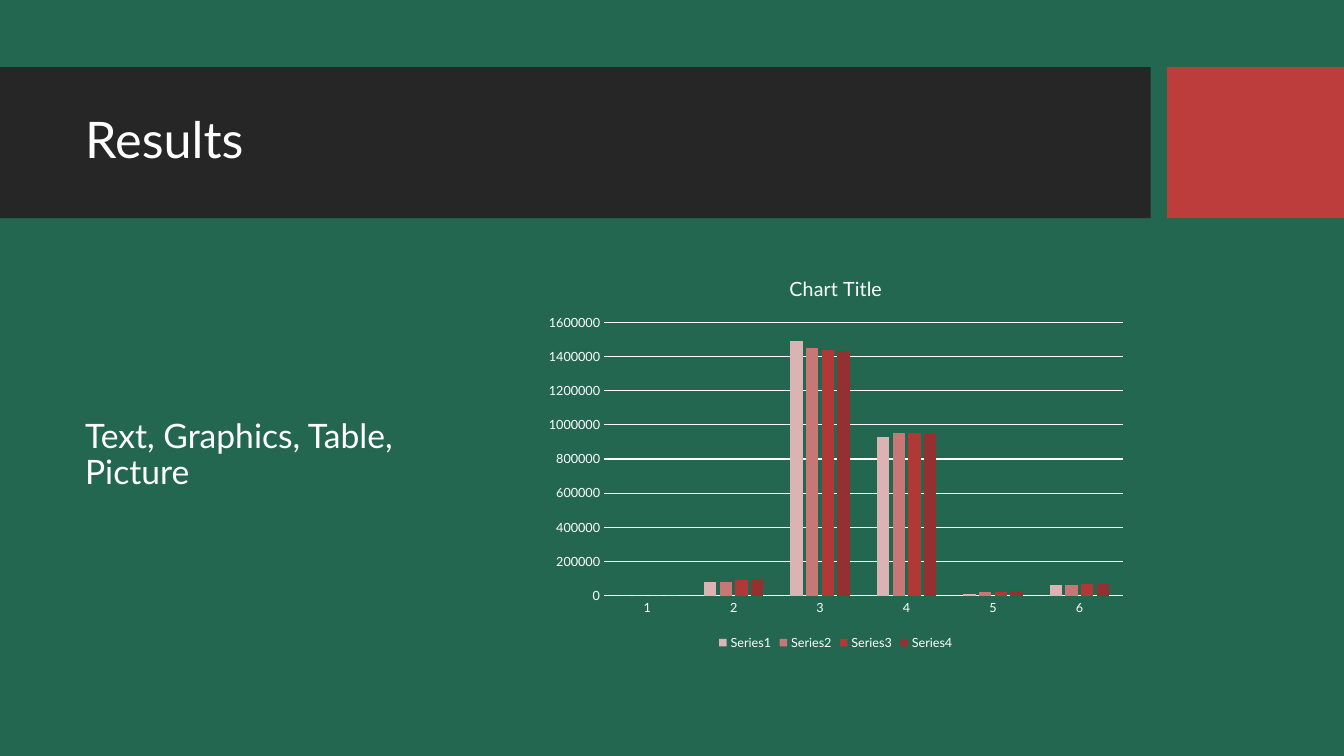
from pptx import Presentation
from pptx.chart.data import CategoryChartData
from pptx.dml.color import RGBColor
from pptx.enum.chart import XL_CHART_TYPE, XL_LEGEND_POSITION, XL_TICK_MARK
from pptx.enum.shapes import MSO_SHAPE
from pptx.enum.text import MSO_ANCHOR
from pptx.util import Pt

RECT = MSO_SHAPE.RECTANGLE
MIDDLE = MSO_ANCHOR.MIDDLE
COLUMN = XL_CHART_TYPE.COLUMN_CLUSTERED
BOTTOM = XL_LEGEND_POSITION.BOTTOM
NO_TICK = XL_TICK_MARK.NONE

FONT = "Lato"
COLORS = {"back": "236751", "band": "262626", "accent": "BC3D3B", "text": "FFFFFF"}
SERIES = {
    "Series1": ("DBB3B2", (0, 80000, 1490000, 930000, 10000, 60000)),
    "Series2": ("C77776", (0, 80000, 1450000, 950000, 20000, 60000)),
    "Series3": ("B03937", (0, 90000, 1440000, 950000, 20000, 70000)),
    "Series4": ("94302F", (0, 100000, 1430000, 950000, 30000, 70000)),
}


def paint(fill, color):
    fill.solid()
    fill.fore_color.rgb = RGBColor.from_string(color)


def style(font, size):
    for name, value in {"name": FONT, "size": Pt(size), "bold": False}.items():
        setattr(font, name, value)
    font.color.rgb = RGBColor.from_string(COLORS["text"])


def add_block(slide, box, color):
    block = slide.shapes.add_shape(RECT, *map(Pt, box))
    block.shadow.inherit = False
    paint(block.fill, color)
    block.line.fill.background()


def add_text(slide, box, text, size):
    frame = slide.shapes.add_textbox(*map(Pt, box)).text_frame
    frame.word_wrap = True
    frame.vertical_anchor = MIDDLE
    para = frame.paragraphs[0]
    para.line_spacing = 0.9
    run = para.add_run()
    run.text = text
    style(run.font, size)


def add_header(slide, box, title):
    left, top, width, height = box
    band, gap, inset = 822, 11.6, 53.8
    add_block(slide, (left, top, band, height), COLORS["band"])
    start = left + band + gap
    add_block(slide, (start, top, left + width - start, height), COLORS["accent"])
    add_text(slide, (left + inset, top + 11, 756.7, 85), title, 36)


def add_results(slide, box):
    data = CategoryChartData()
    data.categories = [str(n) for n in range(1, 7)]
    for name, (_, values) in SERIES.items():
        data.add_series(name, values)
    chart = slide.shapes.add_chart(COLUMN, *map(Pt, box), data).chart
    style(chart.font, 10)

    # Title and legend
    chart.has_title = True
    frame = chart.chart_title.text_frame
    frame.text = "Chart Title"
    style(frame.paragraphs[0].runs[0].font, 14)
    chart.chart_title.include_in_layout = False
    chart.has_legend = True
    chart.legend.position = BOTTOM
    chart.legend.include_in_layout = False
    style(chart.legend.font, 9)

    # Axes and grid
    cat, val = chart.category_axis, chart.value_axis
    for axis in (cat, val):
        axis.major_tick_mark = axis.minor_tick_mark = NO_TICK
        style(axis.tick_labels.font, 9)
    val.has_major_gridlines = True
    for line in (cat.format.line, val.major_gridlines.format.line):
        paint(line.fill, COLORS["text"])
        line.width = Pt(0.75)
    val.format.line.fill.background()
    val.minimum_scale, val.maximum_scale, val.major_unit = 0, 1600000, 200000
    val.tick_labels.number_format = "0"
    val.tick_labels.number_format_is_linked = False

    # Columns
    plot = chart.plots[0]
    plot.vary_by_categories = False
    plot.gap_width, plot.overlap = 219, -27
    for series, (color, _) in zip(plot.series, SERIES.values()):
        series.invert_if_negative = False
        paint(series.format.fill, color)


def add_body(slide, box):
    left, top, width, height = box
    chart_at = 329.7
    add_text(slide, (left, top, 305.3, height), "Text, Graphics, Table, Picture", 24)
    add_results(slide, (left + chart_at, top, width - chart_at, height))


def main():
    deck = Presentation()
    deck.slide_width, deck.slide_height = Pt(960), Pt(540)
    slide = deck.slides.add_slide(deck.slide_layouts[6])
    paint(slide.background.fill, COLORS["back"])
    add_header(slide, (0, 48, 960, 107.8), "Results")
    add_body(slide, (53.8, 183.8, 756.7, 283.7))
    deck.save("out.pptx")


if __name__ == "__main__":
    main()
